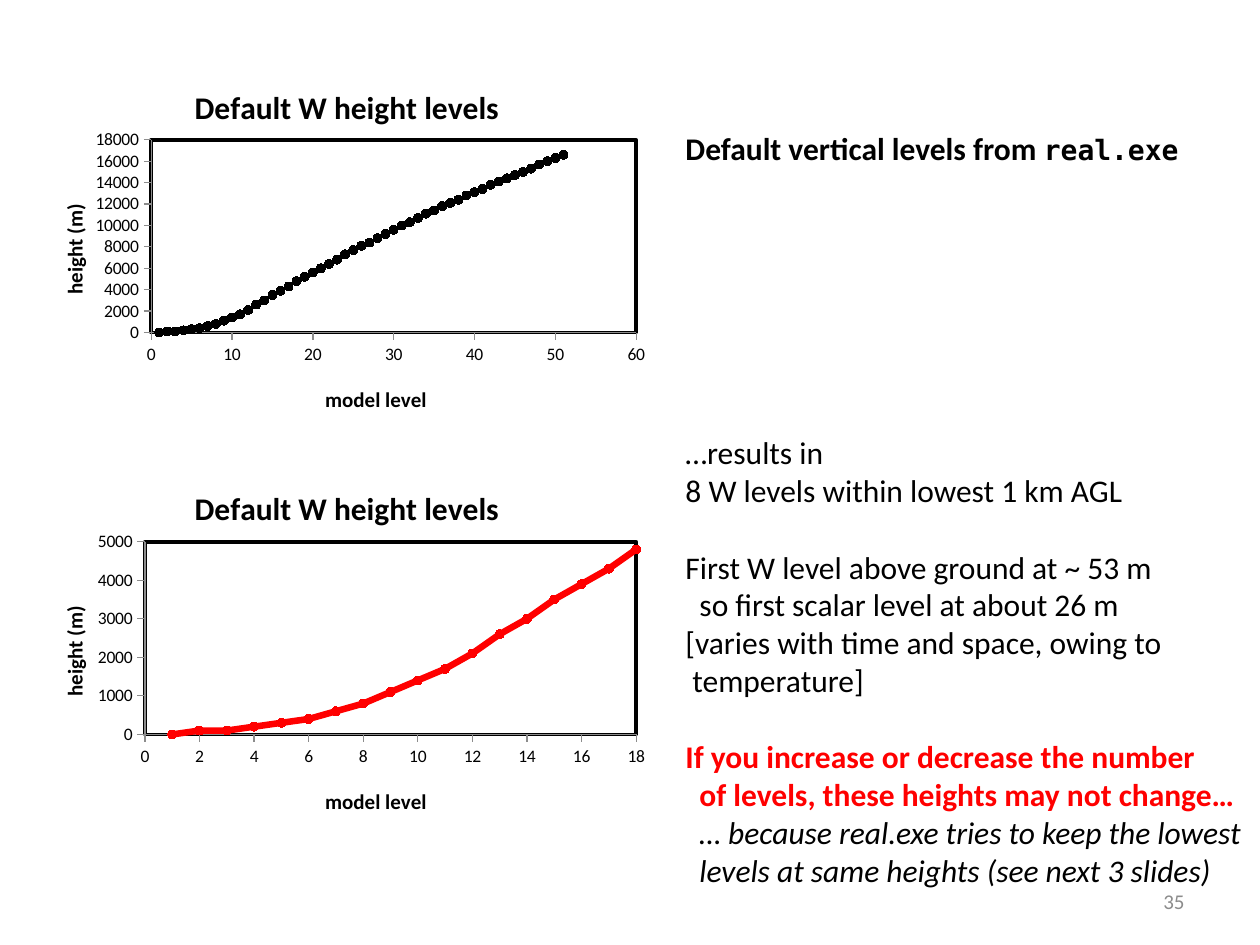
from lxml import etree
from pptx import Presentation
from pptx.chart.data import XyChartData
from pptx.dml.color import RGBColor
from pptx.enum.chart import XL_CHART_TYPE as ChartType, XL_MARKER_STYLE as Marker
from pptx.enum.chart import XL_TICK_MARK as Tick
from pptx.enum.text import MSO_ANCHOR as Anchor, MSO_AUTO_SIZE as AutoSize, PP_ALIGN as Align
from pptx.oxml import parse_xml
from pptx.oxml.ns import nsdecls, qn
from pptx.util import Inches, Pt

BLACK = RGBColor(0x00, 0x00, 0x00)
RED = RGBColor(0xFF, 0x00, 0x00)
GRAY = RGBColor(0x8C, 0x8C, 0x8C)
SANS = "Calibri"
MONO = "DejaVu Sans Mono"

HEIGHTS = [
    0, 100, 100, 200, 300, 400, 600, 800, 1100, 1400, 1700, 2100, 2600,
    3000, 3500, 3900, 4300, 4800, 5200, 5600, 6000, 6400, 6800, 7300, 7700,
    8100, 8400, 8800, 9200, 9600, 10000, 10300, 10700, 11100, 11400, 11800,
    12100, 12400, 12800, 13100, 13400, 13800, 14100, 14400, 14700, 15000,
    15300, 15700, 16000, 16300, 16600,
]
WARNING = {"bold": True, "color": RED}
REASON = {"italic": True}
FINDINGS = [
    ("…results in", 0, 0, {}),
    ("8 W levels within lowest 1 km AGL", 0, 0, {}),
    ("First W level above ground at ~ 53 m", 0, 22, {}),
    ("so first scalar level at about 26 m", 8, 0, {}),
    ("[varies with time and space, owing to", 0, 0, {}),
    ("temperature]", 4, 0, {}),
    ("If you increase or decrease the number", 0, 22, WARNING),
    ("of levels, these heights may not change…", 8, 0, WARNING),
    ("… because real.exe tries to keep the lowest", 8, 0, REASON),
    ("levels at same heights (see next 3 slides)", 8, 0, REASON),
]


def style_font(font, color=BLACK, **values):
    values = {"name": SANS, "size": Pt(18), "bold": False, **values}
    for name, value in values.items():
        setattr(font, name, value)
    font.color.rgb = color


def add_span(para, text, **values):
    span = para.add_run()
    span.text = text
    style_font(span.font, **values)


def prepare_box(shape, box, anchor):
    shape.left, shape.top, shape.width, shape.height = map(Inches, box)
    frame = shape.text_frame
    settings = {
        "word_wrap": True, "auto_size": AutoSize.NONE, "vertical_anchor": anchor,
        "margin_left": Inches(0.1), "margin_right": 0,
        "margin_top": Inches(0.05), "margin_bottom": Inches(0.05),
    }
    for name, value in settings.items():
        setattr(frame, name, value)
    return frame


def add_heading(page, box):
    para = prepare_box(page.shapes.title, box, Anchor.TOP).paragraphs[0]
    para.alignment = Align.LEFT
    add_span(para, "Default vertical levels from ", bold=True)
    add_span(para, "real.exe", bold=True, name=MONO, size=Pt(16))


def add_findings(page, box):
    frame = prepare_box(page.placeholders[1], box, Anchor.TOP)
    for index, (text, indent, gap, values) in enumerate(FINDINGS):
        para = frame.add_paragraph() if index else frame.paragraphs[0]
        para.space_before = Pt(gap)
        props = para._p.get_or_add_pPr()
        props.set("marL", str(Pt(indent)))
        props.set("indent", "0")
        etree.SubElement(props, qn("a:buNone"))
        add_span(para, text, **values)


def add_page_number(page, box):
    shape = page.shapes.add_textbox(*map(Inches, box))
    frame = prepare_box(shape, box, Anchor.MIDDLE)
    frame.margin_right = Inches(0.1)
    para = frame.paragraphs[0]
    para.alignment = Align.RIGHT
    add_span(para, "35", color=GRAY, size=Pt(12))


def set_layout(element, position, shares):
    for old in element.findall(qn("c:layout")):
        element.remove(old)
    layout = etree.Element(qn("c:layout"))
    manual = etree.SubElement(layout, qn("c:manualLayout"))
    entries = [("xMode", "edge"), ("yMode", "edge"), *zip("xywh", shares)]
    if len(shares) == 4:
        entries.insert(0, ("layoutTarget", "inner"))
    for name, value in entries:
        etree.SubElement(manual, qn(f"c:{name}")).set("val", str(value))
    element.insert(position, layout)


def set_title(title, text, size, place):
    para = title.text_frame.paragraphs[0]
    add_span(para, text, bold=True, size=Pt(size))
    set_layout(title._element, 1, place)


def style_axis(axis, text, place, scale):
    axis.has_major_gridlines = False
    axis.major_tick_mark, axis.minor_tick_mark = Tick.OUTSIDE, Tick.NONE
    axis.format.line.color.rgb = GRAY
    axis.format.line.width = Pt(0.75)
    axis.tick_labels.number_format = "General"
    axis.tick_labels.number_format_is_linked = False
    set_title(axis.axis_title, text, 12, place)
    names = ("minimum_scale", "maximum_scale", "major_unit")
    for name, value in zip(names, scale):
        setattr(axis, name, value)


def add_height_chart(page, box, kind, color, line_width, plot_left, x_scale, y_scale):
    data = XyChartData()
    points = data.add_series("Series 1")
    for level, height in enumerate(HEIGHTS, 1):
        points.add_data_point(level, height)
    chart = page.shapes.add_chart(kind, *map(Inches, box), data).chart
    chart.has_legend = False
    style_font(chart.font, size=Pt(10))
    set_title(chart.chart_title, "Default W height levels", 18, (0.26, 0.07))
    style_axis(chart.category_axis, "model level", (0.47, 0.87), x_scale)
    style_axis(chart.value_axis, "height (m)", (0.05, 0.39), y_scale)

    chart.plots[0].vary_by_categories = False
    series = chart.plots[0].series[0]
    series.smooth = False
    if line_width:
        series.format.line.color.rgb = color
        series.format.line.width = Pt(line_width)
    else:
        series.format.line.fill.background()
    series.marker.style, series.marker.size = Marker.CIRCLE, 5
    series.marker.format.fill.solid()
    series.marker.format.fill.fore_color.rgb = color
    series.marker.format.line.color.rgb = color

    plot_area = chart._chartSpace.find(".//" + qn("c:plotArea"))
    set_layout(plot_area, 0, (plot_left, 0.23, round(0.97 - plot_left, 2), 0.51))
    plot_area.append(parse_xml(
        f'<c:spPr {nsdecls("c", "a")}>'
        '<a:solidFill><a:srgbClr val="FFFFFF"/></a:solidFill>'
        '<a:ln w="25400"><a:solidFill><a:srgbClr val="000000"/></a:solidFill></a:ln>'
        '</c:spPr>'))


def main():
    deck = Presentation()
    deck.slide_width, deck.slide_height = Inches(10), Inches(7.5)
    page = deck.slides.add_slide(deck.slide_layouts[1])
    add_heading(page, (5.34, 0.97, 4.66, 0.4))
    add_findings(page, (5.34, 3.39, 4.66, 3.74))
    add_page_number(page, (7.17, 6.95, 2.33, 0.4))
    add_height_chart(page, (0.2, 0.42, 5, 3), ChartType.XY_SCATTER, BLACK, 0,
                     0.2, (0, 60, 10), (0, 18000, 2000))
    add_height_chart(page, (0.2, 3.61, 5, 3), ChartType.XY_SCATTER_LINES, RED, 3.75,
                     0.19, (0, 18, 2), (0, 5000, 1000))
    deck.save("out.pptx")


if __name__ == "__main__":
    main()
